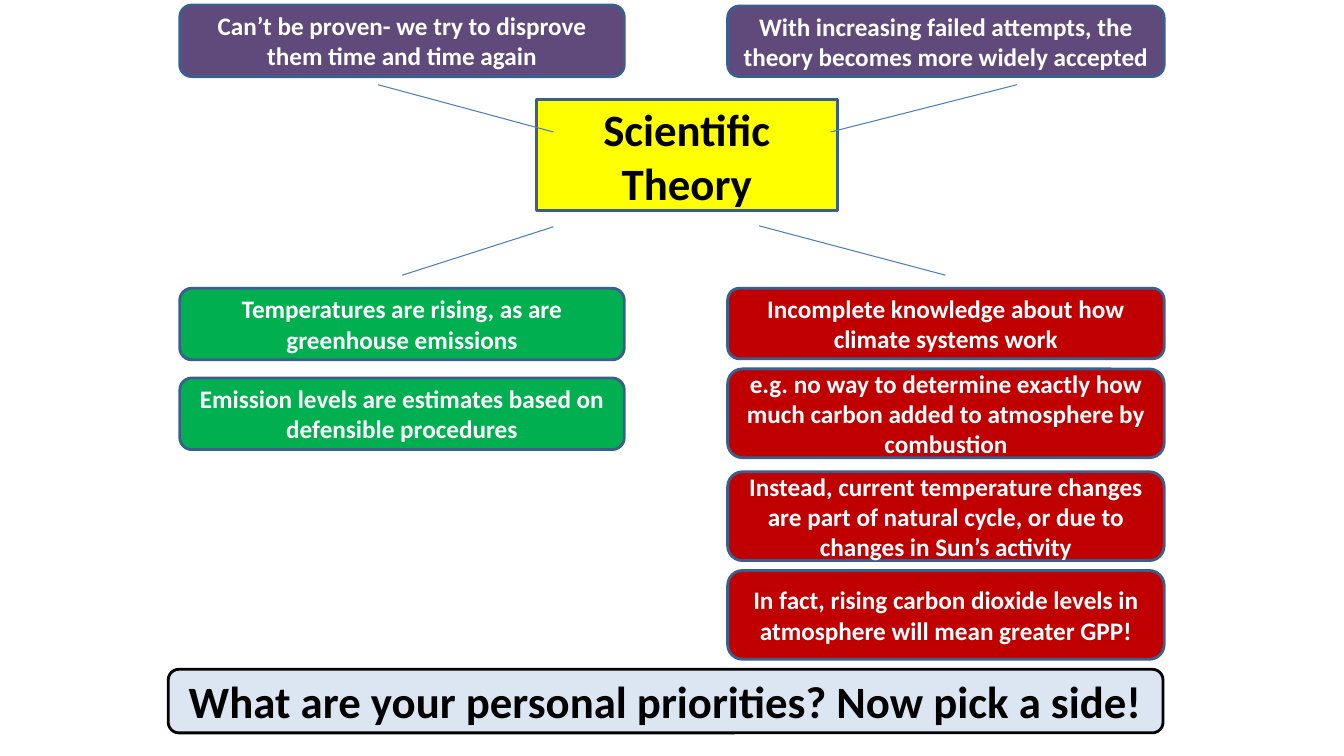
from pptx import Presentation
from pptx import util as u
from pptx.dml import color
from pptx.enum import shapes, text
from pptx.oxml import ns, xmlchemy

COLOURS = {
    "yellow": "FFFF00", "purple": "604A7B", "green": "00B050", "red": "C00000",
    "pale": "DCE6F2", "outline": "3A5F8C", "spoke": "4B7EBC",
    "black": "000000", "white": "FFFFFF",
}
FRAME = {
    "word_wrap": True,
    "auto_size": text.MSO_AUTO_SIZE.NONE,
    "vertical_anchor": text.MSO_ANCHOR.MIDDLE,
}
SMALL = {"name": "Calibri", "size": u.Pt(18), "bold": True}
LARGE = {**SMALL, "size": u.Pt(32)}


def rgb(name):
    return color.RGBColor.from_string(COLOURS[name])


def apply(target, values):
    for name, value in values.items():
        setattr(target, name, value)


def style_card(shape, words, fill, outline="outline", ink="white", font=SMALL):
    shape.shadow.inherit = False
    shape.fill.solid()
    shape.fill.fore_color.rgb = rgb(fill)
    shape.line.color.rgb = rgb(outline)
    shape.line.width = u.Pt(2)
    apply(shape.text_frame, FRAME)
    paragraph = shape.text_frame.paragraphs[0]
    paragraph.alignment = text.PP_ALIGN.CENTER
    run = paragraph.add_run()
    run.text = words
    apply(run.font, font)
    run.font.color.rgb = rgb(ink)


def add_card(slide, box, words, fill, **style):
    shape = slide.shapes.add_shape(
        shapes.MSO_SHAPE.ROUNDED_RECTANGLE, *map(u.Pt, box))
    style_card(shape, words, fill, **style)


def place_title(slide, box, words):
    title = slide.shapes.title
    apply(title, dict(zip(("left", "top", "width", "height"), map(u.Pt, box))))
    geometry = xmlchemy.OxmlElement("a:prstGeom")
    geometry.set("prst", "roundRect")
    geometry.append(xmlchemy.OxmlElement("a:avLst"))
    title.element.spPr.find(ns.qn("a:xfrm")).addnext(geometry)
    style_card(title, words, "yellow", ink="black", font=LARGE)


def add_spokes(slide, box):
    left, top, width, height = box
    spokes = [
        ((-113, -10.8), (12.3, 23)),
        ((width + 128.2, -10.8), (width - 5, 23)),
        ((-95.7, height + 46.1), (12.3, height + 11.5)),
        ((width + 77.1, height + 46.1), (width - 56.1, height + 10.8)),
    ]
    for (x1, y1), (x2, y2) in spokes:
        line = slide.shapes.add_connector(
            shapes.MSO_CONNECTOR.STRAIGHT,
            u.Pt(left + x1), u.Pt(top + y1), u.Pt(left + x2), u.Pt(top + y2))
        line.line.color.rgb = rgb("spoke")
        line.line.width = u.Pt(0.75)
        line.element.spPr.append(xmlchemy.OxmlElement("a:effectLst"))


def add_column(slide, box, fill, cards):
    left, top, width = box
    for offset, height, words in cards:
        add_card(slide, (left, top + offset, width, height), words, fill)


def build_theory_slide(presentation):
    slide = presentation.slides.add_slide(presentation.slide_layouts[5])
    centre = (383, 71.3, 215.3, 79.2)
    place_title(slide, centre, "Scientific Theory")
    add_spokes(slide, centre)
    add_column(slide, (128.4, 3.6, 317.5), "purple", [
        (0, 51.1, "Can’t be proven- we try to disprove them time and time again"),
    ])
    add_column(slide, (519.8, 4.3, 311.8), "purple", [
        (0, 50.4, "With increasing failed attempts, the theory becomes more widely accepted"),
    ])
    add_column(slide, (128.4, 205.9, 317.5), "green", [
        (0, 51.1, "Temperatures are rising, as are greenhouse emissions"),
        (64.1, 51.1, "Emission levels are estimates based on defensible procedures"),
    ])
    add_column(slide, (519.8, 205.9, 311.8), "red", [
        (0, 50.4, "Incomplete knowledge about how climate systems work"),
        (57.6, 63.4, "e.g. no way to determine exactly how much carbon added to "
                     "atmosphere by combustion"),
        (131.1, 63.4, "Instead, current temperature changes are part of natural cycle, "
                      "or due to changes in Sun’s activity"),
        (201.6, 63.4, "In fact, rising carbon dioxide levels in atmosphere will mean "
                      "greater GPP!"),
    ])
    add_card(slide, (120.2, 478.1, 710.6, 45.4),
             "What are your personal priorities? Now pick a side!",
             "pale", outline="black", ink="black", font=LARGE)


def main():
    presentation = Presentation()
    presentation.slide_width = u.Pt(960)
    presentation.slide_height = u.Pt(540)
    build_theory_slide(presentation)
    presentation.save("out.pptx")


if __name__ == "__main__":
    main()
